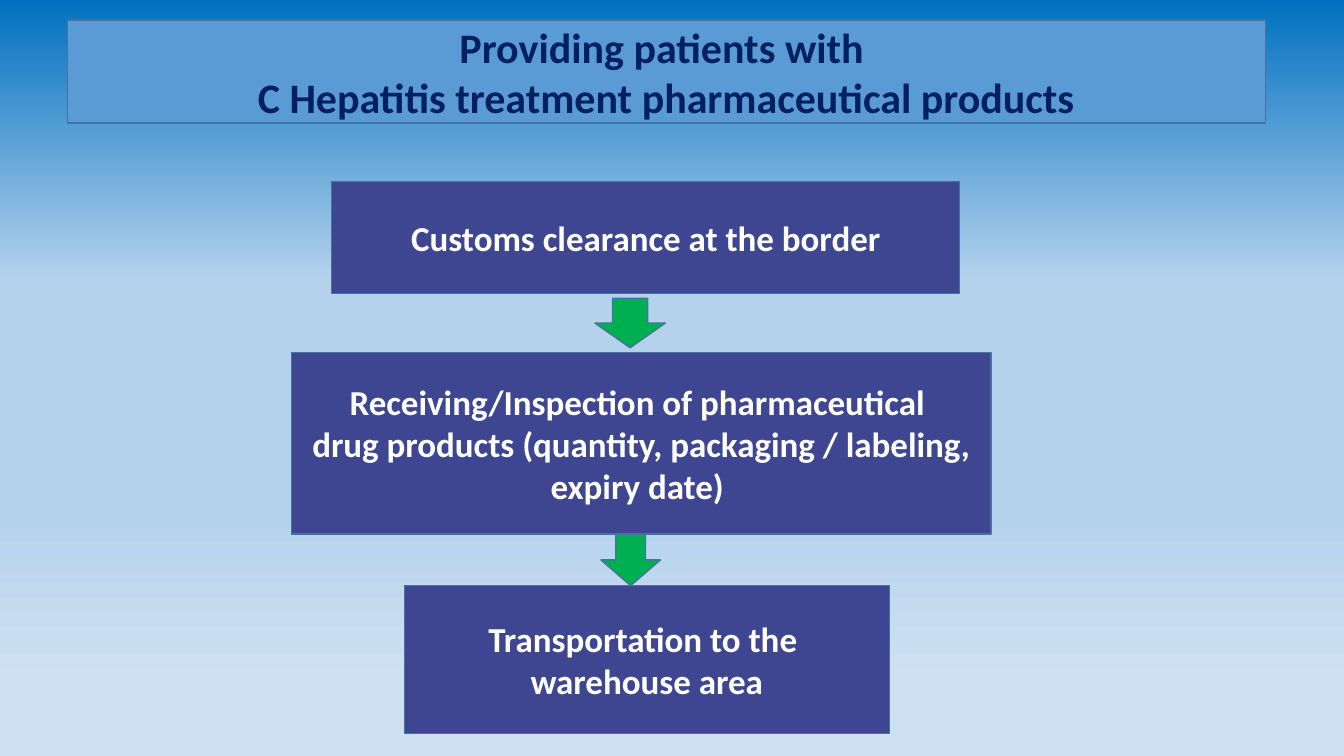
import copy
from dataclasses import dataclass

import pptx
import pptx.dml.color
import pptx.enum.shapes
import pptx.enum.text
import pptx.oxml.ns
import pptx.shapes.autoshape
import pptx.slide
import pptx.util

Inches = pptx.util.Inches
Preset = pptx.enum.shapes.MSO_SHAPE


@dataclass(frozen=True)
class Theme:
    font: str = "Calibri"
    title_size: int = 30
    step_size: int = 25
    title_text: str = "002060"
    step_text: str = "FFFFFF"
    title_fill: str = "5B9BD5"
    step_fill: str = "3E4692"
    arrow_fill: str = "00B050"
    outline: str = "43739E"
    outline_width: int = 1
    sky: tuple[tuple[float, str], ...] = (
        (0, "0070C0"),
        (0.37, "B5D2EC"),
        (0.4, "B5D2EC"),
        (0.68, "B5D2EC"),
        (0.9, "CEE1F2"),
    )


@dataclass(frozen=True)
class Area:
    left: float
    top: float
    width: float
    height: float


@dataclass(frozen=True)
class Panel:
    area: Area
    text: str
    fill: str
    size: int
    color: str


THEME = Theme()


def step(area: Area, text: str) -> Panel:
    return Panel(area, text, THEME.step_fill, THEME.step_size, THEME.step_text)


STEPS = [
    step(Area(3.29, 1.8, 6.23, 1.11), "Customs clearance at the border"),
    step(
        Area(2.89, 3.5, 6.94, 1.8),
        "Receiving/Inspection of pharmaceutical \n"
        "drug products (quantity, packaging / labeling, expiry date) ",
    ),
    step(Area(4.01, 5.81, 4.81, 1.47), "Transportation to the \nwarehouse area"),
]
ARROWS = [Area(5.9, 2.96, 0.7, 0.49), Area(5.96, 5.3, 0.59, 0.51)]
TITLE = Panel(
    Area(0.67, 0.2, 11.88, 1.02),
    "Providing patients with \nC Hepatitis treatment pharmaceutical products",
    THEME.title_fill,
    THEME.title_size,
    THEME.title_text,
)


def rgb(value: str) -> pptx.dml.color.RGBColor:
    return pptx.dml.color.RGBColor.from_string(value)


def paint_sky(slide: pptx.slide.Slide) -> None:
    fill = slide.background.fill
    fill.gradient()
    fill.gradient_angle = 270
    stops = slide.element.find(".//" + pptx.oxml.ns.qn("a:gsLst"))
    while len(stops) < len(THEME.sky):
        stops.append(copy.deepcopy(stops[0]))
    for stop, (position, color) in zip(fill.gradient_stops, THEME.sky):
        stop.position = position
        stop.color.rgb = rgb(color)


def draw_shape(
    slide: pptx.slide.Slide, preset: Preset, area: Area, fill: str
) -> pptx.shapes.autoshape.Shape:
    shape = slide.shapes.add_shape(
        preset,
        Inches(area.left),
        Inches(area.top),
        Inches(area.width),
        Inches(area.height),
    )
    shape.shadow.inherit = False
    shape.fill.solid()
    shape.fill.fore_color.rgb = rgb(fill)
    shape.line.color.rgb = rgb(THEME.outline)
    shape.line.width = pptx.util.Pt(THEME.outline_width)
    return shape


def draw_panel(slide: pptx.slide.Slide, panel: Panel) -> None:
    frame = draw_shape(slide, Preset.RECTANGLE, panel.area, panel.fill).text_frame
    frame.text = panel.text
    frame.word_wrap = True
    frame.vertical_anchor = pptx.enum.text.MSO_ANCHOR.MIDDLE
    for paragraph in frame.paragraphs:
        paragraph.alignment = pptx.enum.text.PP_ALIGN.CENTER
        for run in paragraph.runs:
            run.font.name = THEME.font
            run.font.size = pptx.util.Pt(panel.size)
            run.font.bold = True
            run.font.color.rgb = rgb(panel.color)


def main() -> None:
    deck = pptx.Presentation()
    deck.slide_width = Inches(13.33)
    deck.slide_height = Inches(7.5)
    slide = deck.slides.add_slide(deck.slide_layouts[6])
    paint_sky(slide)
    for panel in STEPS:
        draw_panel(slide, panel)
    for area in ARROWS:
        draw_shape(slide, Preset.DOWN_ARROW, area, THEME.arrow_fill)
    draw_panel(slide, TITLE)
    deck.save("out.pptx")


if __name__ == "__main__":
    main()
